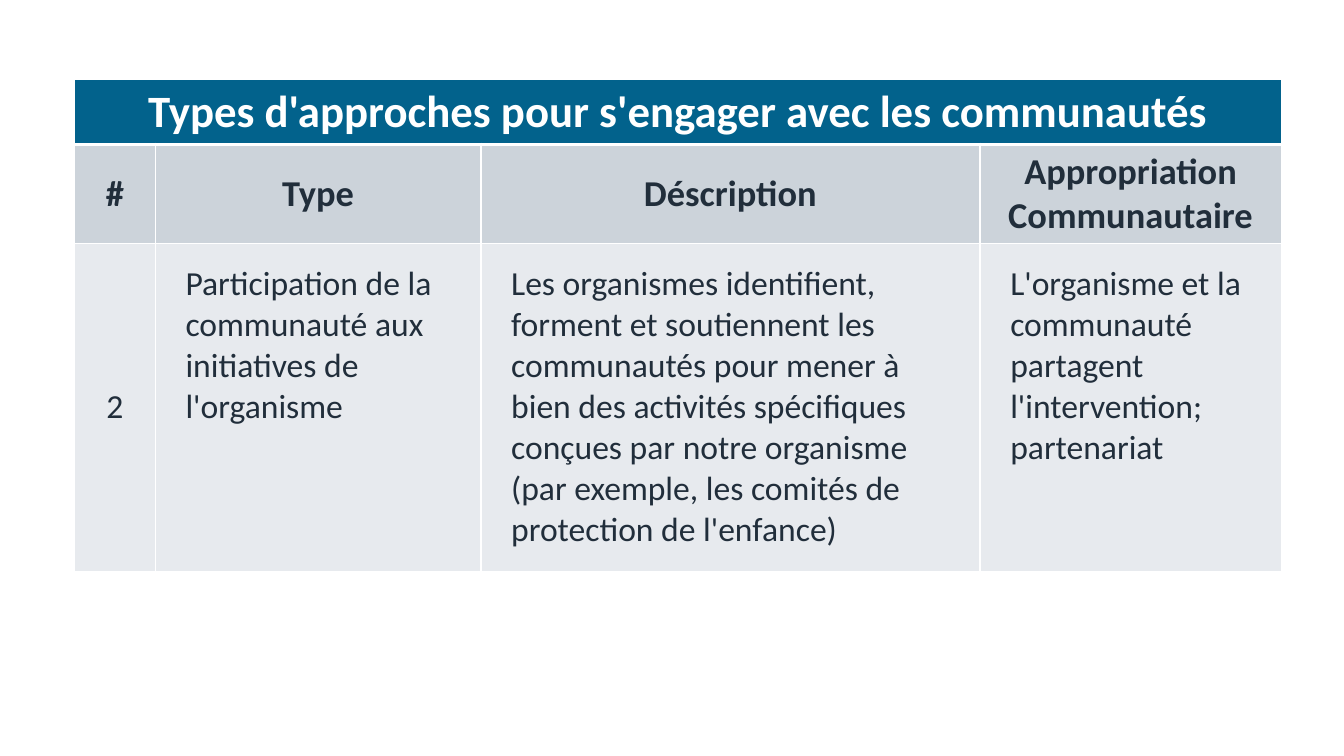
from pptx import Presentation
from pptx.util import Inches, Pt
from pptx.dml.color import RGBColor
from pptx.enum.text import PP_ALIGN as Align, MSO_ANCHOR as Anchor
from lxml.etree import SubElement as Sub
from pptx.oxml.ns import qn


def rgb(color):
    return RGBColor.from_string(color)


def edge(cell, side, width):
    line = Sub(cell._tc.get_or_add_tcPr(), qn("a:ln" + side), w=str(Pt(width)))
    Sub(Sub(line, qn("a:solidFill")), qn("a:srgbClr"), val="FFFFFF")


# Slide
deck = Presentation()
deck.slide_width, deck.slide_height = Inches(13.33), Inches(7.5)
slide = deck.slides.add_slide(deck.slide_layouts[6])

# Grid and wording
cols = [0.8, 3.23, 4.95, 2.99]
rows = [0.63, 0.98, 3.25]
texts = [
    ["Types d'approches pour s'engager avec les communautés", "", "", ""],
    ["#", "Type", "Déscription", "Appropriation Communautaire"],
    ["2",
     "Participation de la communauté aux initiatives de l'organisme",
     "Les organismes identifient, forment et soutiennent les communautés "
     "pour mener à bien des activités spécifiques conçues par notre organisme "
     "(par exemple, les comités de protection de l'enfance)",
     "L'organisme et la communauté partagent l'intervention; partenariat"],
]

# Fill, text colour and font of each row
looks = [
    ("02628C", "FFFFFF", {"size": Pt(32), "bold": True}),
    ("CCD3DA", "212E3B", {"size": Pt(26), "bold": True}),
    ("E7EAEE", "212E3B", {"size": Pt(24), "bold": False}),
]
inset = {"margin_left": Inches(0.3), "margin_right": Inches(0.3),
         "margin_top": Inches(0.2), "margin_bottom": Inches(0.2),
         "vertical_anchor": Anchor.TOP}

# Table
table = slide.shapes.add_table(
    len(rows), len(cols), Inches(0.74), Inches(0.79),
    Inches(sum(cols)), Inches(sum(rows))).table
for col, width in zip(table.columns, cols):
    col.width = Inches(width)
for row, height in zip(table.rows, rows):
    row.height = Inches(height)
table.cell(0, 0).merge(table.cell(0, len(cols) - 1))

# Cells
for r, (fill, ink, font) in enumerate(looks):
    for c, text in enumerate(texts[r]):
        cell = table.cell(r, c)
        for side in "LRTB":
            thick = (r, side) in [(0, "B"), (1, "T")]
            edge(cell, side, 3 if thick else 1)
        cell.fill.solid()
        cell.fill.fore_color.rgb = rgb(fill)
        if not text:
            continue
        cell.text = text
        para = cell.text_frame.paragraphs[0]
        body = r == 2 and c > 0
        para.alignment = Align.LEFT if body else Align.CENTER
        cell.vertical_anchor = Anchor.MIDDLE if r else Anchor.TOP
        if body:
            for name, value in inset.items():
                setattr(cell, name, value)
        run = para.runs[0]
        for name, value in {"name": "Calibri", **font}.items():
            setattr(run.font, name, value)
        run.font.color.rgb = rgb(ink)

deck.save("out.pptx")
